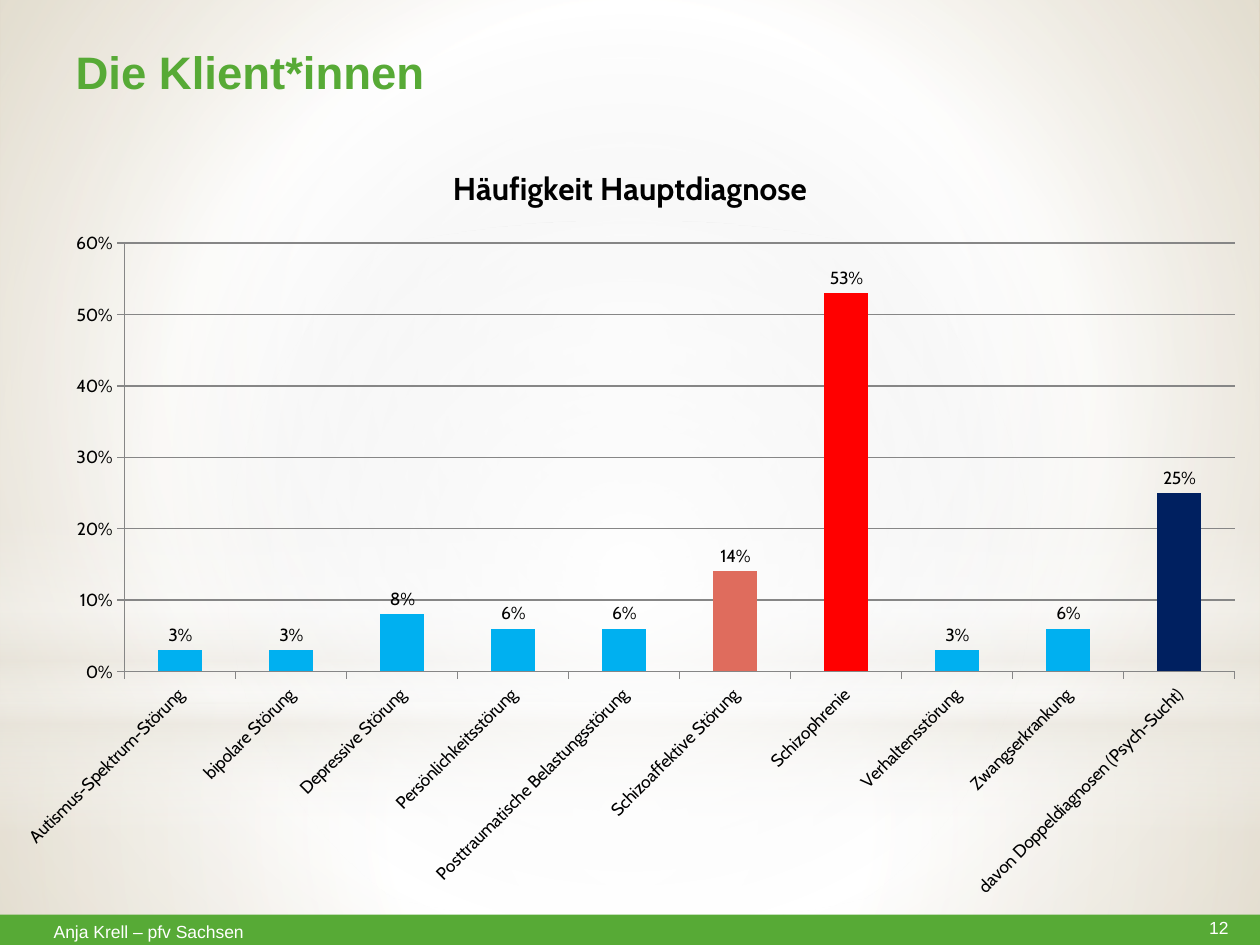
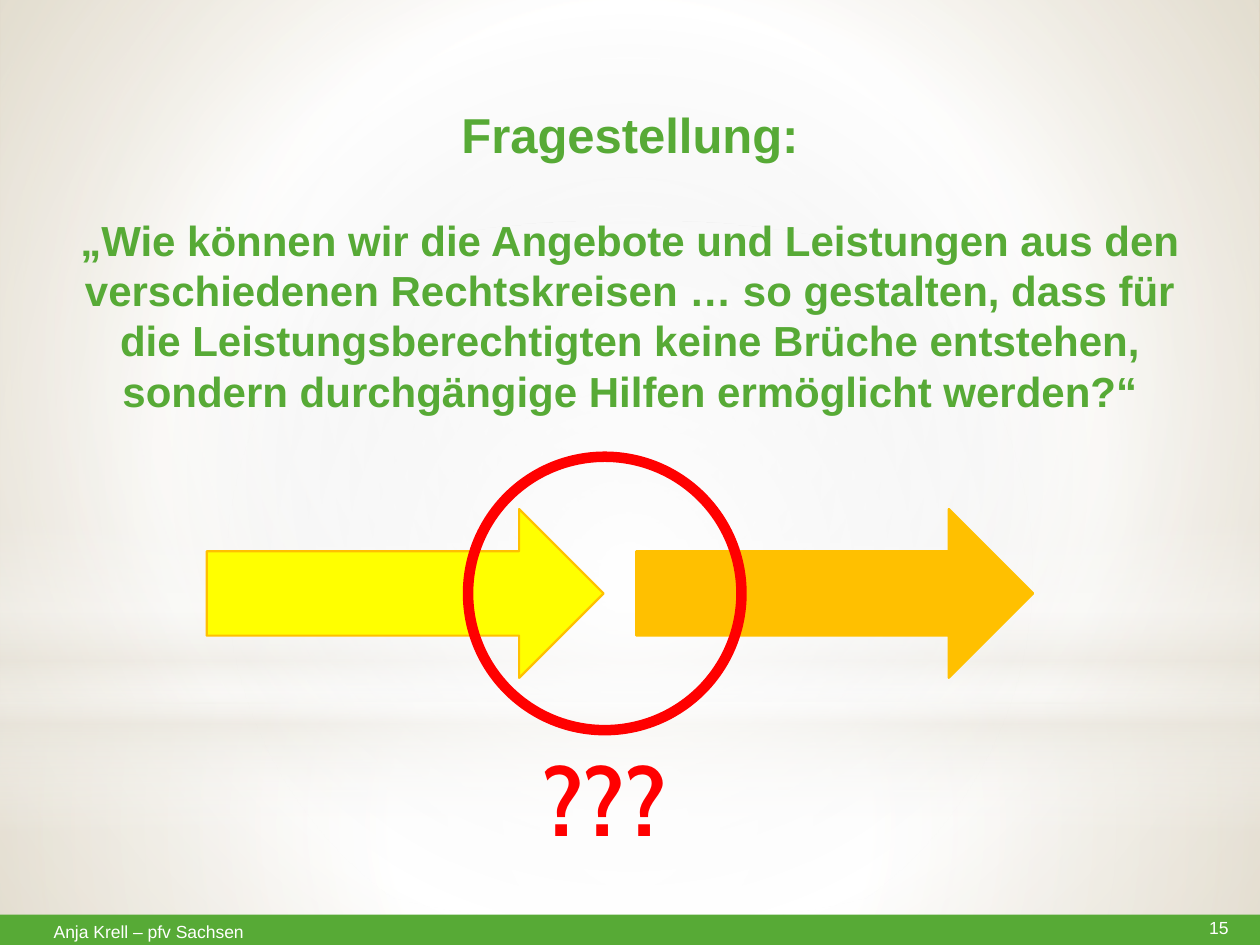
import lxml.etree
import pptx
import pptx.chart.data
import pptx.dml.color
import pptx.enum.chart
import pptx.enum.shapes
import pptx.enum.text
import pptx.util
from dataclasses import dataclass
from pptx.oxml.ns import qn

SHAPES = pptx.enum.shapes.MSO_SHAPE
ALIGN = pptx.enum.text.PP_ALIGN
ANCHOR = pptx.enum.text.MSO_ANCHOR


@dataclass(frozen=True)
class Theme:
    green: str = "57AA36"
    white: str = "FFFFFF"
    sand: str = "E9E5DC"
    black: str = "000000"
    grid: str = "868686"
    blue: str = "00B0F0"
    salmon: str = "DF6C5D"
    red: str = "FF0000"
    navy: str = "002060"
    yellow: str = "FFFF00"
    amber: str = "FFC000"
    text_font: str = "Arial"
    display_font: str = "Cabin"
    title_size: int = 26
    question_heading_size: int = 28
    question_size: int = 24
    footer_size: int = 10
    chart_title_size: int = 18
    chart_size: int = 10
    marks_size: int = 54


THEME = Theme()
WIDTH, HEIGHT = 10, 7.5

# Gradient stops: position, colour, opacity (all percentages)
BACKGROUND = [(0, "BFBFBF", 100), (60, THEME.white, 100), (100, "CDBF9F", 100)]
HORIZON = 5.58
BACKDROP = [  # preset, box, stops, linear angle or None for a radial gradient
    (SHAPES.RECTANGLE, (0, HORIZON, WIDTH, HEIGHT - HORIZON),
     [(0, THEME.white, 91), (37, THEME.white, 76), (100, THEME.sand, 79)], None),
    (SHAPES.RECTANGLE, (0, 0, WIDTH, HORIZON),
     [(0, THEME.white, 89), (48, THEME.white, 62), (100, THEME.sand, 79)], None),
    (SHAPES.RECTANGLE, (0, 4.12, WIDTH, 2.5),
     [(0, THEME.white, 0), (29, THEME.white, 30), (45, THEME.sand, 40),
      (55, THEME.white, 26), (65, THEME.sand, 60), (100, THEME.white, 0)], 90),
    (SHAPES.OVAL, (0, 1.75, WIDTH, HORIZON),
     [(0, THEME.white, 100), (56, THEME.white, 0)], None),
]
BAND_HEIGHT = 0.24
FOOTER = "Anja Krell – pfv Sachsen"

CLIENTS_TITLE = "Die Klient*innen"
CHART_TITLE = "Häufigkeit Hauptdiagnose"
DIAGNOSES = [
    ("Autismus-Spektrum-Störung", 0.03, THEME.blue),
    ("bipolare Störung", 0.03, THEME.blue),
    ("Depressive Störung", 0.08, THEME.blue),
    ("Persönlichkeitsstörung", 0.06, THEME.blue),
    ("Posttraumatische Belastungsstörung", 0.06, THEME.blue),
    ("Schizoaffektive Störung", 0.14, THEME.salmon),
    ("Schizophrenie", 0.53, THEME.red),
    ("Verhaltensstörung", 0.03, THEME.blue),
    ("Zwangserkrankung", 0.06, THEME.blue),
    ("davon Doppeldiagnosen (Psych-Sucht)", 0.25, THEME.navy),
]
CHART_TOP, CHART_HEIGHT = 1.1, 6.15
PLOT_LEFT, PLOT_TOP, PLOT_WIDTH, PLOT_HEIGHT = 0.99, 0.83, 8.81, 3.4

QUESTION_HEADING = "Fragestellung:"
QUESTION = ("„Wie können wir die Angebote und Leistungen aus den verschiedenen "
            "Rechtskreisen … so gestalten, dass für die Leistungsberechtigten keine "
            "Brüche entstehen, sondern durchgängige Hilfen ermöglicht werden?“")
ARROW_COLOURS = [THEME.yellow, THEME.amber]
ARROW_LEFT, ARROW_TOP, ARROW_WIDTH, ARROW_HEIGHT, ARROW_GAP = 1.64, 4.04, 3.15, 1.34, 0.26
RING_SIZE = 2.17
RING_CENTRE = 4.8
MARKS = "???"


def rgb(colour):
    return pptx.dml.color.RGBColor.from_string(colour)


def inches(box):
    return [pptx.util.Inches(length) for length in box]


def style_font(font, size, colour, name=THEME.text_font, bold=False):
    font.size = pptx.util.Pt(size)
    font.name = name
    font.bold = bold
    font.color.rgb = rgb(colour)


def write_paragraph(paragraph, text, align, size, colour, name=THEME.text_font, bold=False):
    paragraph.text = text
    paragraph.alignment = align
    for run in paragraph.runs:
        style_font(run.font, size, colour, name, bold)


def paint_gradient(fill, element, stops, angle=None):
    """Give the fill, the first one inside element, a gradient."""
    fill.solid()
    solid = element.find(".//" + qn("a:solidFill"))
    gradient = lxml.etree.Element(qn("a:gradFill"), rotWithShape="1")
    stop_list = lxml.etree.SubElement(gradient, qn("a:gsLst"))
    for position, colour, opacity in stops:
        stop = lxml.etree.SubElement(stop_list, qn("a:gs"), pos=str(position * 1000))
        tint = lxml.etree.SubElement(stop, qn("a:srgbClr"), val=colour)
        if opacity < 100:
            lxml.etree.SubElement(tint, qn("a:alpha"), val=str(opacity * 1000))
    if angle is None:
        radial = lxml.etree.SubElement(gradient, qn("a:path"), path="circle")
        lxml.etree.SubElement(radial, qn("a:fillToRect"), l="50000", t="50000",
                              r="50000", b="50000")
    else:
        lxml.etree.SubElement(gradient, qn("a:lin"), ang=str(angle * 60000), scaled="0")
    solid.getparent().replace(solid, gradient)


def add_preset(slide, preset, box, fill=None, line=None, line_width=1.25):
    shape = slide.shapes.add_shape(preset, *inches(box))
    shape.shadow.inherit = False
    if fill:
        shape.fill.solid()
        shape.fill.fore_color.rgb = rgb(fill)
    else:
        shape.fill.background()
    if line:
        shape.line.color.rgb = rgb(line)
        shape.line.width = pptx.util.Pt(line_width)
    else:
        shape.line.fill.background()
    return shape


def add_text(slide, box, text, align, size, colour, name=THEME.text_font, bold=False):
    text_box = slide.shapes.add_textbox(*inches(box))
    write_paragraph(text_box.text_frame.paragraphs[0], text, align, size, colour, name, bold)
    return text_box.text_frame


def dress_master(master, slide):
    """Draw the backdrop and green band on the slide, then move them to the master."""
    paint_gradient(master.background.fill, master.element, BACKGROUND)
    shapes = []
    for preset, box, stops, angle in BACKDROP:
        shape = add_preset(slide, preset, box)
        paint_gradient(shape.fill, shape.element, stops, angle)
        shapes.append(shape)
    band = (0, HEIGHT - BAND_HEIGHT, WIDTH, BAND_HEIGHT)
    shapes.append(add_preset(slide, SHAPES.RECTANGLE, band, THEME.green))
    for index, shape in enumerate(shapes):
        shape.element.nvSpPr.cNvPr.set("id", str(100 + index))
        master.shapes.element.insert(2 + index, shape.element)


def add_footer(slide, number):
    author = add_text(slide, (-0.31, 7.21, 2.88, 0.36), FOOTER, ALIGN.CENTER,
                      THEME.footer_size, THEME.white)
    page = add_text(slide, (7.42, 7.28, 2.33, 0.36), str(number), ALIGN.RIGHT,
                    THEME.footer_size, THEME.white)
    for frame in (author, page):
        frame.word_wrap = True
        frame.margin_left = frame.margin_right = frame.margin_top = frame.margin_bottom = 0
    author.margin_left = pptx.util.Inches(0.1)
    author.vertical_anchor = ANCHOR.MIDDLE


def place_title(slide, box):
    title = slide.shapes.title
    title.left, title.top, title.width, title.height = inches(box)
    frame = title.text_frame
    frame.word_wrap = True
    frame.auto_size = pptx.enum.text.MSO_AUTO_SIZE.NONE
    frame.vertical_anchor = ANCHOR.TOP
    return frame


def set_plot_area(chart):
    """Fix the inner plot area as shares of the chart."""
    plot_area = chart.element.find(".//" + qn("c:plotArea"))
    layout = plot_area.find(qn("c:layout"))
    if layout is None:
        layout = lxml.etree.Element(qn("c:layout"))
        plot_area.insert(0, layout)
    manual = lxml.etree.SubElement(layout, qn("c:manualLayout"))
    settings = {"layoutTarget": "inner", "xMode": "edge", "yMode": "edge",
                "x": PLOT_LEFT / WIDTH, "y": PLOT_TOP / CHART_HEIGHT,
                "w": PLOT_WIDTH / WIDTH, "h": PLOT_HEIGHT / CHART_HEIGHT}
    for name, value in settings.items():
        lxml.etree.SubElement(manual, qn("c:" + name), val=str(value))


def style_axis(axis):
    style_font(axis.tick_labels.font, THEME.chart_size, THEME.black, THEME.display_font)
    axis.major_tick_mark = pptx.enum.chart.XL_TICK_MARK.OUTSIDE
    axis.minor_tick_mark = pptx.enum.chart.XL_TICK_MARK.NONE
    axis.format.line.color.rgb = rgb(THEME.grid)


def add_diagnosis_chart(slide):
    names, shares, colours = zip(*DIAGNOSES)
    data = pptx.chart.data.CategoryChartData(number_format="0%")
    data.categories = names
    data.add_series("Series 1", shares)
    chart = slide.shapes.add_chart(pptx.enum.chart.XL_CHART_TYPE.COLUMN_CLUSTERED,
                                   *inches((0, CHART_TOP, WIDTH, CHART_HEIGHT)), data).chart
    style_font(chart.font, THEME.chart_size, THEME.black, THEME.display_font)
    chart.has_legend = False
    chart.has_title = True
    write_paragraph(chart.chart_title.text_frame.paragraphs[0], CHART_TITLE, ALIGN.CENTER,
                    THEME.chart_title_size, THEME.black, THEME.display_font, True)
    set_plot_area(chart)

    style_axis(chart.category_axis)
    label_body = chart.category_axis._element.find(".//" + qn("a:bodyPr"))
    label_body.set("rot", str(-45 * 60000))
    label_body.set("vert", "horz")
    value_axis = chart.value_axis
    style_axis(value_axis)
    value_axis.minimum_scale, value_axis.maximum_scale, value_axis.major_unit = 0, 0.6, 0.1
    value_axis.tick_labels.number_format = "0%"
    value_axis.tick_labels.number_format_is_linked = False
    value_axis.major_gridlines.format.line.color.rgb = rgb(THEME.grid)

    plot = chart.plots[0]
    plot.gap_width = 150
    plot.vary_by_categories = False
    for index, colour in enumerate(colours):
        bar = plot.series[0].points[index].format.fill
        bar.solid()
        bar.fore_color.rgb = rgb(colour)
    labels = plot.series[0].data_labels
    labels.show_value = True
    labels.number_format = "0%"
    labels.number_format_is_linked = False
    labels.position = pptx.enum.chart.XL_LABEL_POSITION.OUTSIDE_END
    style_font(labels.font, THEME.chart_size, THEME.black, THEME.display_font)


def build_clients_slide(slide):
    frame = place_title(slide, (0.5, 0.3, 8.54, 1.19))
    write_paragraph(frame.paragraphs[0], CLIENTS_TITLE, ALIGN.LEFT, THEME.title_size,
                    THEME.green, bold=True)
    add_diagnosis_chart(slide)


def build_question_slide(slide):
    frame = place_title(slide, (0.44, 0.78, 9.12, 3.85))
    heading, question = frame.paragraphs[0], frame.add_paragraph()
    write_paragraph(heading, QUESTION_HEADING, ALIGN.CENTER, THEME.question_heading_size,
                    THEME.green, bold=True)
    write_paragraph(question, QUESTION, ALIGN.CENTER, THEME.question_size,
                    THEME.green, bold=True)
    question.space_before = pptx.util.Pt(29)

    for index, colour in enumerate(ARROW_COLOURS):
        left = ARROW_LEFT + index * (ARROW_WIDTH + ARROW_GAP)
        add_preset(slide, SHAPES.RIGHT_ARROW, (left, ARROW_TOP, ARROW_WIDTH, ARROW_HEIGHT),
                   colour, THEME.amber)
    ring_top = ARROW_TOP + (ARROW_HEIGHT - RING_SIZE) / 2
    add_preset(slide, SHAPES.OVAL,
               (RING_CENTRE - RING_SIZE / 2, ring_top, RING_SIZE, RING_SIZE),
               line=THEME.red, line_width=6)
    marks = add_text(slide, (RING_CENTRE - 0.6, 5.84, 1.2, 1.01), MARKS, ALIGN.CENTER,
                     THEME.marks_size, THEME.red, THEME.display_font, True)
    marks.word_wrap = False
    marks.auto_size = pptx.enum.text.MSO_AUTO_SIZE.SHAPE_TO_FIT_TEXT


def main():
    presentation = pptx.Presentation()
    presentation.slide_width, presentation.slide_height = inches((WIDTH, HEIGHT))
    title_only = presentation.slide_layouts[5]
    for number, build in [(12, build_clients_slide), (15, build_question_slide)]:
        slide = presentation.slides.add_slide(title_only)
        if len(presentation.slides) == 1:
            dress_master(presentation.slide_master, slide)
        add_footer(slide, number)
        build(slide)
    presentation.save("out.pptx")


if __name__ == "__main__":
    main()
